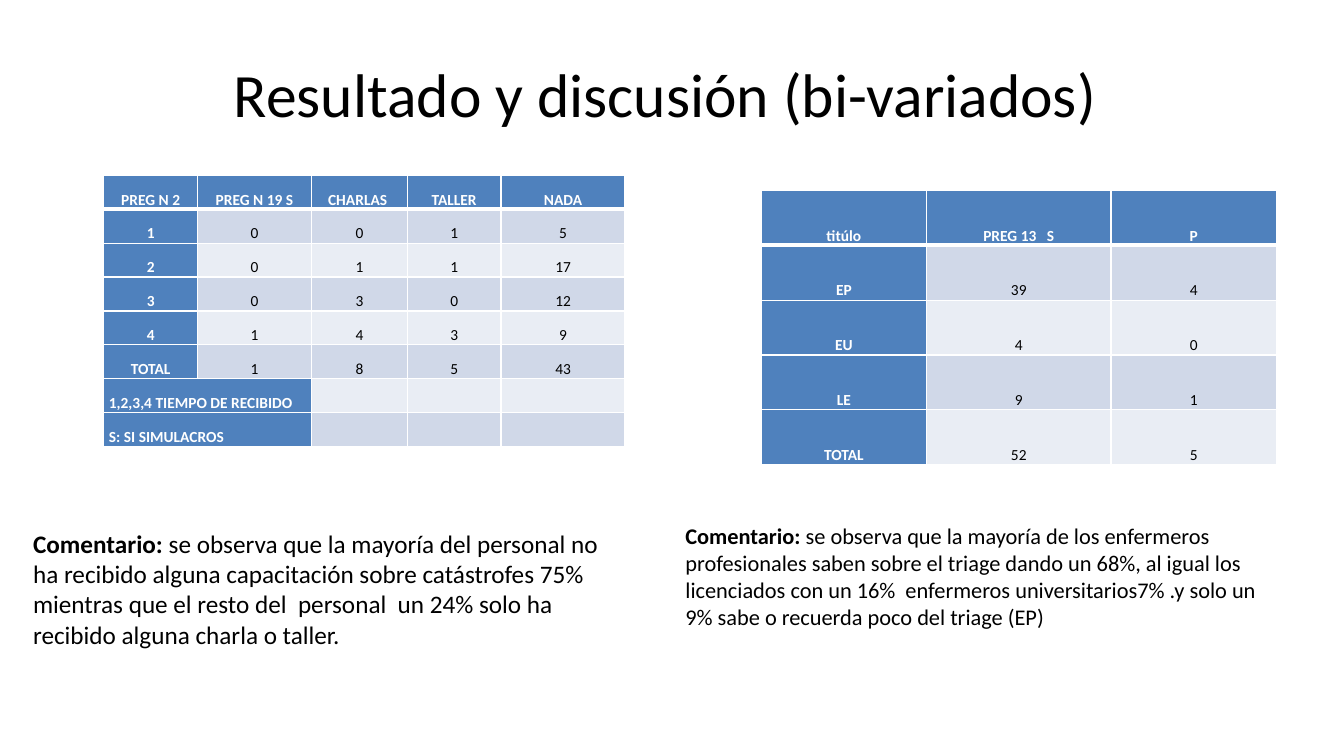
from lxml import etree
from pptx import Presentation
from pptx.dml.color import RGBColor
from pptx.enum.text import MSO_ANCHOR, PP_ALIGN
from pptx.oxml.ns import qn
from pptx.util import Inches, Pt

FONT = "Calibri"
BLACK = RGBColor(0x00, 0x00, 0x00)
WHITE = RGBColor(0xFF, 0xFF, 0xFF)
BLUE = RGBColor(0x4F, 0x81, 0xBD)
BANDS = (RGBColor(0xE9, 0xED, 0xF4), RGBColor(0xD0, 0xD8, 0xE8))

TRAINING = [
    ["PREG N 2", "PREG N 19 S", "CHARLAS ", "TALLER", "NADA"],
    ["1", "0", "0", "1", "5"],
    ["2", "0", "1", "1", "17"],
    ["3", "0", "3", "0", "12"],
    ["4", "1", "4", "3", "9"],
    ["TOTAL", "1", "8", "5", "43"],
    ["1,2,3,4 TIEMPO DE RECIBIDO", None, "", "", ""],
    ["S: SI SIMULACROS", None, "", "", ""],
]
TRIAGE = [
    ["titúlo", "PREG 13   S", "P"],
    ["EP", "39", "4"],
    ["EU", "4", "0"],
    ["LE", "9", "1"],
    ["TOTAL", "52", "5"],
]
TRAINING_COMMENT = (
    " se observa que la mayoría del personal no ha recibido alguna capacitación "
    "sobre catástrofes 75%  mientras que el resto del  personal  un 24% solo ha "
    "recibido alguna charla o taller."
)
TRIAGE_COMMENT = (
    " se observa que la mayoría de los enfermeros profesionales saben sobre el "
    "triage dando un 68%, al igual los licenciados con un 16%  enfermeros "
    "universitarios7% .y solo un 9% sabe o recuerda poco del triage (EP)"
)


def add_span(para, text, size, color=BLACK, bold=False):
    span = para.add_run()
    span.text = text
    span.font.name = FONT
    span.font.size = Pt(size)
    span.font.bold = bold
    span.font.color.rgb = color


def add_text(page, left, top, width, height):
    box = page.shapes.add_textbox(
        Inches(left), Inches(top), Inches(width), Inches(height))
    box.text_frame.word_wrap = True
    return box.text_frame


def add_title(page, text):
    frame = add_text(page, 0.67, 0.3, 12, 1.25)
    frame.vertical_anchor = MSO_ANCHOR.MIDDLE
    para = frame.paragraphs[0]
    para.alignment = PP_ALIGN.CENTER
    add_span(para, text, 44)


def add_comment(page, place, text, size, inset_top=0.05):
    frame = add_text(page, *place)
    frame.margin_top = Inches(inset_top)
    para = frame.paragraphs[0]
    add_span(para, "Comentario:", size, bold=True)
    add_span(para, text, size)


def set_borders(cell, top, bottom):
    """White borders: 1 pt at the sides, given widths above and below."""
    properties = cell._tc.get_or_add_tcPr()
    widths = {"a:lnL": 1, "a:lnR": 1, "a:lnT": top, "a:lnB": bottom}
    for index, (tag, width) in enumerate(widths.items()):
        line = etree.Element(qn(tag), w=str(Pt(width)))
        fill = etree.SubElement(line, qn("a:solidFill"))
        etree.SubElement(fill, qn("a:srgbClr"), val=str(WHITE))
        properties.insert(index, line)


def fill_cell(cell, text, row, is_label, alignment):
    cell.margin_left = cell.margin_right = Inches(0.05)
    cell.margin_top = cell.margin_bottom = 0
    cell.vertical_anchor = MSO_ANCHOR.BOTTOM
    cell.fill.solid()
    cell.fill.fore_color.rgb = BLUE if is_label else BANDS[row % 2]
    set_borders(cell, 3 if row == 1 else 1, 3 if row == 0 else 1)
    if text:
        para = cell.text_frame.paragraphs[0]
        para.alignment = alignment
        para.line_spacing = 1.07
        add_span(para, text, 11, WHITE if is_label else BLACK, is_label)


def add_grid(page, left, top, widths, row_height, rows):
    """Table with label row and column; None merges with the cell before."""
    table = page.shapes.add_table(
        len(rows), len(widths), Inches(left), Inches(top),
        Inches(sum(widths)), Inches(row_height * len(rows))).table
    for column, width in zip(table.columns, widths):
        column.width = Inches(width)
    for row, values in enumerate(rows):
        table.rows[row].height = Inches(row_height)
        alignment = PP_ALIGN.LEFT if None in values else PP_ALIGN.CENTER
        for column, text in enumerate(values):
            cell = table.cell(row, column)
            is_label = row == 0 or column == 0 or text is None
            fill_cell(cell, text, row, is_label, alignment)
            if text is None:
                table.cell(row, column - 1).merge(cell)


def main():
    deck = Presentation()
    deck.slide_width, deck.slide_height = Inches(13.33), Inches(7.5)
    page = deck.slides.add_slide(deck.slide_layouts[6])

    add_title(page, "Resultado y discusión (bi-variados) ")

    # Training received, on the left
    add_grid(page, 1.03, 1.74, [0.93, 1.13, 0.95, 0.93, 1.23], 2.69 / 8, TRAINING)
    add_comment(page, (0.23, 4.89, 6, 1.62), TRAINING_COMMENT, 18, inset_top=0.35)

    # Triage knowledge, on the right
    add_grid(page, 7.55, 1.89, [1.64, 1.83, 1.64], 2.72 / 5, TRIAGE)
    add_comment(page, (6.7, 5.13, 5.96, 1.45), TRIAGE_COMMENT, 16)

    deck.save("out.pptx")


if __name__ == "__main__":
    main()
